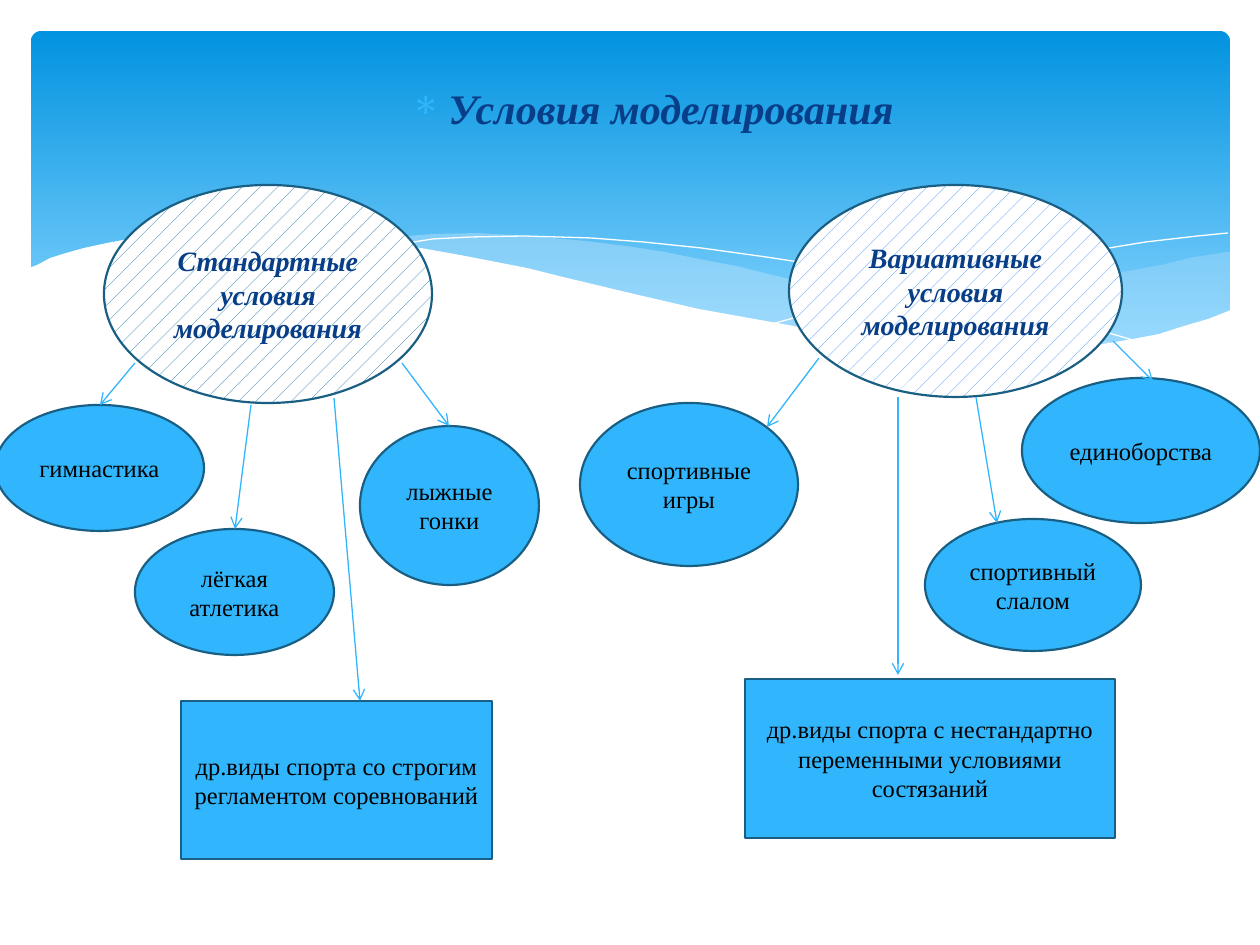
from lxml import etree
from pptx import Presentation
from pptx import util as u
from pptx.dml.color import RGBColor
from pptx.enum import dml, shapes, text
from pptx.oxml.ns import qn

PX = 914400 / 126
FONT = "Times New Roman"
SKY, EDGE, NAVY, PALE = "31B6FD", "195F84", "073E87", "C6E7FC"


def px(*lengths):
    return [u.Emu(round(n * PX)) for n in lengths]


def rgb(code):
    return RGBColor.from_string(code)


prs = Presentation()
prs.slide_width, prs.slide_height = px(1260, 945)
slide = prs.slides.add_slide(prs.slide_layouts[6])
canvas = slide.shapes

banner = canvas.add_shape(shapes.MSO_SHAPE.ROUNDED_RECTANGLE, *px(31, 31, 1199, 340))
banner.adjustments[0] = 0.03
banner.shadow.inherit = False
banner.line.fill.background()
banner.fill.gradient()
banner.fill.gradient_angle = 270
for stop, (position, code) in zip(banner.fill.gradient_stops, [(0, "0293E0"), (0.9, "83D3FE")]):
    stop.position = position
    stop.color.rgb = rgb(code)

right_swell = [
    (1228, 252), (1194, 257), (1161, 265), (1123, 272), (1085, 281), (1014, 299),
    (949, 312), (890, 324), (833, 334), (871, 339), (906, 343), (954, 348),
    (998, 349), (1038, 349), (1076, 348), (1110, 345), (1140, 340), (1169, 335),
    (1196, 327), (1213, 318), (1230, 311), (1230, 252)]
long_swell = [
    (1125, 344), (1091, 339), (1017, 328), (934, 311), (842, 291), (793, 280),
    (736, 266), (699, 259), (665, 252), (633, 247), (586, 241), (529, 236),
    (479, 233), (433, 234), (394, 237), (360, 241), (407, 247), (456, 255),
    (509, 266), (566, 280), (619, 292), (668, 302), (713, 312), (757, 321),
    (799, 329), (838, 335), (876, 340), (910, 344), (943, 347), (974, 349),
    (1003, 350), (1043, 350), (1080, 349), (1104, 347)]
long_crest = [
    (389, 246), (401, 244), (433, 239), (471, 237), (524, 236), (591, 238),
    (643, 242), (701, 248), (766, 257), (838, 268), (916, 285), (1002, 304),
    (1095, 329), (1143, 343)]
right_crest = [
    (772, 324), (823, 310), (876, 296), (942, 281), (1016, 265), (1091, 251),
    (1146, 242), (1198, 236), (1228, 233)]
foam = [
    (1231, 310), (1208, 319), (1184, 326), (1159, 334), (1133, 339), (1103, 344),
    (1071, 347), (1037, 349), (999, 348), (959, 347), (915, 343), (867, 338),
    (816, 330), (760, 320), (699, 309), (634, 294), (563, 277), (527, 268),
    (460, 255), (398, 244), (341, 237), (290, 233), (243, 232), (203, 232),
    (166, 234), (134, 238), (107, 243), (84, 248), (66, 253), (50, 258),
    (37, 265), (29, 268), (29, 415), (1231, 415)]

for points, code, opacity in [
    (right_swell, PALE, 29), (long_swell, PALE, 40),
    (long_crest, None, 100), (right_crest, None, 100), (foam, "FFFFFF", 100),
]:
    outline = canvas.build_freeform(*points[0], scale=PX)
    outline.add_line_segments(points[1:], close=code is not None)
    wave = outline.convert_to_shape()
    wave.shadow.inherit = False
    if code is None:
        wave.fill.background()
        wave.line.color.rgb = rgb("FFFFFF")
        wave.line.width = u.Pt(0)
        continue
    wave.line.fill.background()
    wave.fill.solid()
    wave.fill.fore_color.rgb = rgb(code)
    if opacity < 100:
        tint = wave.fill._xPr.find(qn("a:solidFill"))[0]
        etree.SubElement(tint, qn("a:alpha"), val=str(opacity * 1000))

heading = canvas.add_textbox(*px(44, 76, 1216, 832)).text_frame
heading.word_wrap = True
title = heading.paragraphs[0]
title.text = "Условия моделирования"
title.alignment = text.PP_ALIGN.CENTER
title.space_before = u.Pt(4.8)
title.font.name, title.font.size = FONT, u.Pt(24)
title.font.bold = title.font.italic = True
title.font.color.rgb = rgb(NAVY)
indents = title._p.get_or_add_pPr()
indents.set("marL", "274320")
indents.set("indent", "-274320")
bullet_color = etree.SubElement(indents, qn("a:buClr"))
etree.SubElement(bullet_color, qn("a:srgbClr"), val=SKY)
etree.SubElement(indents, qn("a:buChar"), char="∗")
indents.append(indents.find(qn("a:defRPr")))

OVAL, RECT = shapes.MSO_SHAPE.OVAL, shapes.MSO_SHAPE.RECTANGLE
for label, box, kind, hatch in [
    ("Стандартные условия моделирования", (104, 185, 328, 218), OVAL, "016296"),
    ("Вариативные условия моделирования", (789, 185, 333, 212), OVAL, "2D83F4"),
    ("гимнастика", (-5, 405, 209, 126), OVAL, None),
    ("лёгкая атлетика", (135, 529, 199, 126), OVAL, None),
    ("лыжные гонки", (360, 426, 179, 159), OVAL, None),
    ("спортивные игры", (580, 403, 218, 163), OVAL, None),
    ("единоборства", (1022, 378, 238, 145), OVAL, None),
    ("спортивный слалом", (925, 519, 216, 132), OVAL, None),
    ("др.виды спорта со строгим регламентом соревнований", (181, 701, 311, 158), RECT, None),
    ("др.виды спорта с нестандартно переменными условиями состязаний", (745, 679, 370, 159), RECT, None),
]:
    node = canvas.add_shape(kind, *px(*box))
    node.shadow.inherit = False
    node.line.color.rgb = rgb(EDGE)
    node.line.width = u.Pt(1.25)
    if hatch:
        node.fill.patterned()
        node.fill.pattern = dml.MSO_PATTERN.PERCENT_5
        node.fill.fore_color.rgb = rgb(hatch)
        node.fill.back_color.rgb = rgb("FFFFFF")
    else:
        node.fill.solid()
        node.fill.fore_color.rgb = rgb(SKY)
    frame = node.text_frame
    frame.word_wrap = True
    frame.vertical_anchor = text.MSO_ANCHOR.MIDDLE
    caption = frame.paragraphs[0]
    caption.text = label
    caption.alignment = text.PP_ALIGN.CENTER
    caption.font.name = FONT
    caption.font.size = u.Pt(16 if hatch else 14)
    caption.font.bold = caption.font.italic = bool(hatch)
    caption.font.color.rgb = rgb(NAVY if hatch else "000000")

for ends in [
    (135, 363, 100, 405), (251, 405, 235, 529), (334, 398, 360, 701), (402, 363, 449, 426),
    (819, 358, 767, 427), (898, 397, 898, 675), (976, 397, 997, 523), (1113, 341, 1153, 381),
]:
    arrow = canvas.add_connector(shapes.MSO_CONNECTOR.STRAIGHT, *px(*ends))
    arrow.line.color.rgb = rgb(SKY)
    arrow.line.width = u.Pt(0.75)
    etree.SubElement(arrow.line._get_or_add_ln(), qn("a:tailEnd"), type="arrow")
    etree.SubElement(arrow._element.spPr, qn("a:effectLst"))

prs.save("out.pptx")
